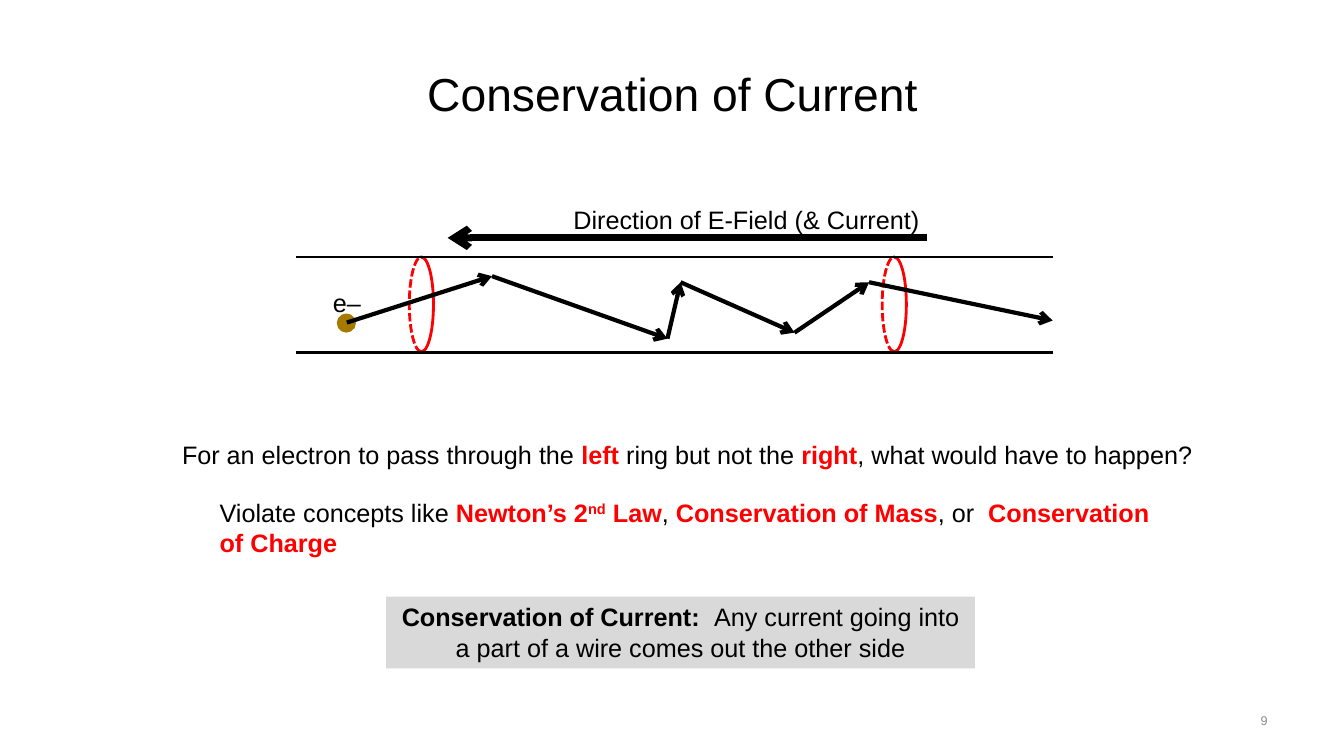
from itertools import pairwise

from lxml.etree import SubElement
from pptx import Presentation
from pptx.dml.color import RGBColor
from pptx.enum.dml import MSO_LINE
from pptx.enum.shapes import MSO_CONNECTOR, MSO_SHAPE
from pptx.enum.text import MSO_ANCHOR, PP_ALIGN
from pptx.oxml.ns import qn
from pptx.util import Emu, Pt

BLACK = RGBColor(0x00, 0x00, 0x00)
RED = RGBColor(0xFF, 0x00, 0x00)
GOLD = RGBColor(0xA6, 0x7A, 0x00)
SILVER = RGBColor(0xD9, 0xD9, 0xD9)
GRAY = RGBColor(0x8C, 0x8C, 0x8C)
PX = 9144  # 100 px to the inch


def px(*nums):
    return [Emu(num * PX) for num in nums]


def key(text):
    """A bold red run."""
    return text, {"bold": True, "color": RED}


def write(frame, *parts, size=18, color=BLACK, align=PP_ALIGN.CENTER,
          anchor=MSO_ANCHOR.TOP):
    """Fill a frame with plain strings or (string, format) pairs."""
    frame.word_wrap = True
    frame.vertical_anchor = anchor
    para = frame.paragraphs[0]
    para.alignment = align
    for part in parts:
        text, style = (part, {}) if isinstance(part, str) else part
        run = para.add_run()
        run.text = text
        run.font.name = "Arial"
        run.font.size = Pt(size)
        run.font.bold = style.get("bold", False)
        run.font.color.rgb = style.get("color", color)
        if "raised" in style:
            run.font._element.set("baseline", str(style["raised"] * 1000))


class Board:
    def __init__(self, slide):
        self.shapes = slide.shapes

    def text(self, box, *parts, **style):
        write(self.shapes.add_textbox(*px(*box)).text_frame, *parts, **style)

    def shape(self, kind, box, fill=None):
        item = self.shapes.add_shape(kind, *px(*box))
        item.shadow.inherit = False
        item.line.fill.background()
        if fill is None:
            item.fill.background()
        else:
            item.fill.solid()
            item.fill.fore_color.rgb = fill
        return item

    def line(self, start, end, width=2, arrow=False):
        item = self.shapes.add_connector(
            MSO_CONNECTOR.STRAIGHT, *px(*start, *end))
        item.line.width = Pt(width)
        item.line.color.rgb = BLACK
        if arrow:
            SubElement(item.line._get_or_add_ln(), qn("a:tailEnd"), type="arrow")
        SubElement(item._element.spPr, qn("a:effectLst"))

    def ring(self, left):
        """Solid front half and dashed back half."""
        halves = ((161.47, 54.64, MSO_LINE.SOLID),
                  (53.93, 162, MSO_LINE.SQUARE_DOT))
        for start, end, dash in halves:
            arc = self.shape(MSO_SHAPE.ARC, (left, 255, 24, 94))
            arc.adjustments[0] = start
            arc.adjustments[1] = end
            arc.line.color.rgb = RED
            arc.line.width = Pt(2)
            arc.line.dash_style = dash


def main():
    deck = Presentation()
    deck.slide_width, deck.slide_height = px(1333, 750)
    board = Board(deck.slides.add_slide(deck.slide_layouts[6]))

    # Title and question
    board.text((67, 30, 1200, 125), "Conservation of Current",
               size=33, anchor=MSO_ANCHOR.MIDDLE)
    board.text((350, 198, 650, 40), "Direction of E-Field")
    board.text((144, 431, 1075, 40),
               "For an electron to pass through the ", key("left"),
               " ring but not the ", key("right"),
               ", what would have to happen?")

    # Wire with its two rings
    for left in (406, 875):
        board.ring(left)
    for y in (350, 255):
        board.line((294, y), (1044, y))

    # Field arrow
    board.line((919, 236), (444, 236), width=5, arrow=True)

    # Electron and its path
    board.shape(MSO_SHAPE.OVAL, (334, 311, 19, 19), GOLD)
    board.text((319, 280, 50, 40), "e–")
    track = [(344, 320), (488, 274), (662, 336), (675, 280),
             (788, 330), (862, 280), (1044, 318)]
    for start, end in pairwise(track):
        board.line(start, end, width=3, arrow=True)

    # Answer
    board.text((208, 488, 967, 71), "Violate concepts like ",
               key("Newton’s 2"),
               ("nd", {"bold": True, "color": RED, "raised": 30}),
               key(" Law"), ", ", key("Conservation of Mass"), ", or ",
               key(" Conservation of Charge"), align=PP_ALIGN.LEFT)

    # Conclusion
    rule = board.shape(MSO_SHAPE.RECTANGLE, (383, 592, 584, 71), SILVER)
    write(rule.text_frame, ("Conservation of Current:  ", {"bold": True}),
          "Any current going into a part of a wire comes out the other side")

    # Current label and page number
    board.text((756, 198, 188, 40), "(& Current)")
    board.text((956, 695, 311, 40), "9", size=9, color=GRAY,
               align=PP_ALIGN.RIGHT, anchor=MSO_ANCHOR.MIDDLE)

    deck.save("out.pptx")


if __name__ == "__main__":
    main()
